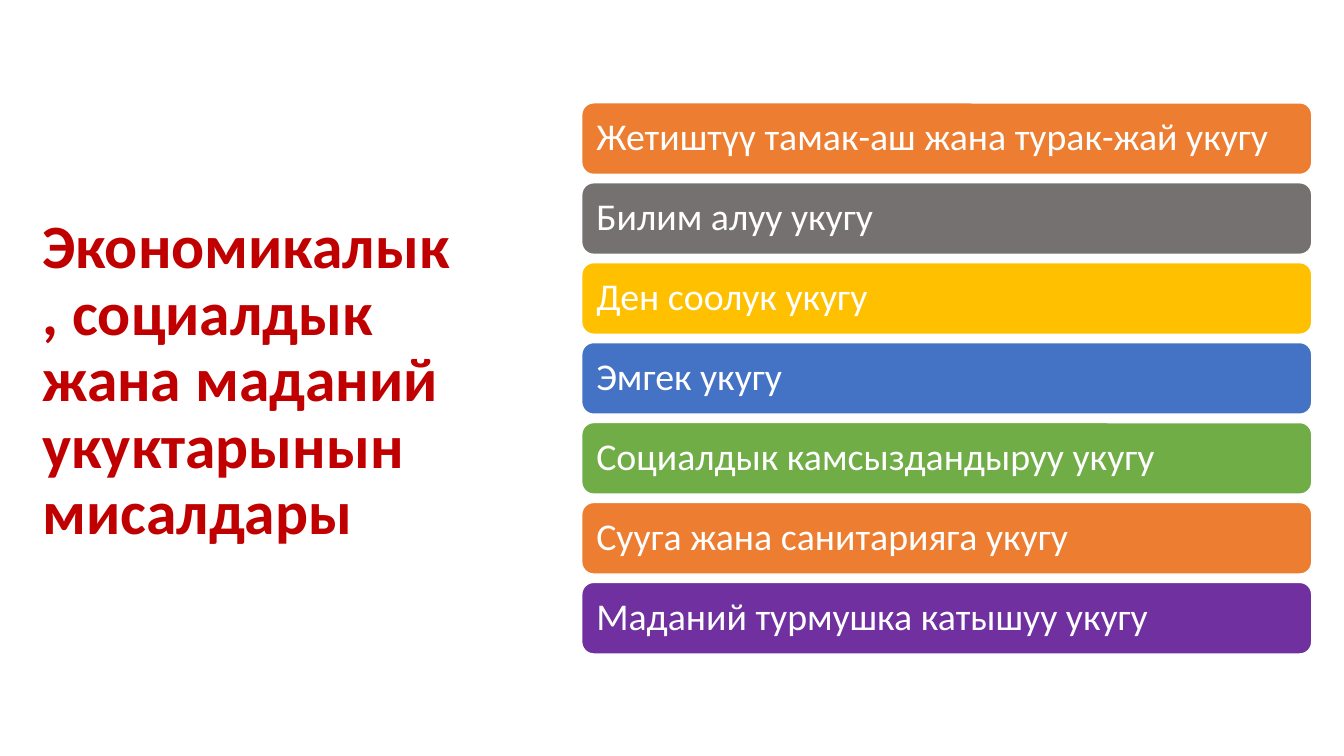
from pptx import Presentation
from pptx.dml.color import RGBColor
from pptx.enum.shapes import MSO_SHAPE
from pptx.enum.text import MSO_ANCHOR, MSO_AUTO_SIZE, PP_ALIGN
from pptx.util import Inches, Pt

ROUNDED = MSO_SHAPE.ROUNDED_RECTANGLE
MIDDLE = MSO_ANCHOR.MIDDLE
NO_AUTOFIT = MSO_AUTO_SIZE.NONE
LEFT = PP_ALIGN.LEFT

WHITE = RGBColor(0xFF, 0xFF, 0xFF)
DARK_RED = RGBColor(0xC0, 0x00, 0x00)
ORANGE = RGBColor(0xED, 0x7D, 0x31)
GRAY = RGBColor(0x76, 0x71, 0x71)
GOLD = RGBColor(0xFF, 0xC0, 0x00)
BLUE = RGBColor(0x44, 0x72, 0xC4)
GREEN = RGBColor(0x70, 0xAD, 0x47)
PURPLE = RGBColor(0x70, 0x30, 0xA0)

BAR_TOP = 1.02
BAR_PITCH = 0.793


def write_text(shape, text, size, color, bold=False, inset_x=0.1, inset_y=0.05):
    frame = shape.text_frame
    frame.word_wrap = True
    frame.auto_size = NO_AUTOFIT
    frame.vertical_anchor = MIDDLE
    frame.margin_left = frame.margin_right = Inches(inset_x)
    frame.margin_top = frame.margin_bottom = Inches(inset_y)
    paragraph = frame.paragraphs[0]
    paragraph.alignment = LEFT
    paragraph.line_spacing = 0.9
    run = paragraph.add_run()
    run.text = text
    run.font.name = "Calibri"
    run.font.size = Pt(size)
    run.font.bold = bold
    run.font.color.rgb = color


prs = Presentation()
prs.slide_width = Inches(13.33)
prs.slide_height = Inches(7.5)
slide = prs.slides.add_slide(prs.slide_layouts[5])

title = slide.shapes.title
title.left, title.top = Inches(0.32), Inches(0.78)
title.width, title.height = Inches(4.4), Inches(6.02)
write_text(
    title,
    "Экономикалык, социалдык жана маданий укуктарынын мисалдары",
    size=44,
    color=DARK_RED,
    bold=True,
)

rights = [
    ("Жетиштүү тамак-аш жана турак-жай укугу", ORANGE),
    ("Билим алуу укугу", GRAY),
    ("Ден соолук укугу", GOLD),
    ("Эмгек укугу", BLUE),
    ("Социалдык камсыздандыруу укугу", GREEN),
    ("Сууга жана санитарияга укугу", ORANGE),
    ("Маданий турмушка катышуу укугу", PURPLE),
]

for index, (right, color) in enumerate(rights):
    top = BAR_TOP + index * BAR_PITCH
    bar = slide.shapes.add_shape(
        ROUNDED, Inches(5.77), Inches(top), Inches(7.24), Inches(0.71)
    )
    bar.shadow.inherit = False
    bar.fill.solid()
    bar.fill.fore_color.rgb = color
    bar.line.color.rgb = WHITE
    bar.line.width = Pt(1)
    write_text(bar, right, size=27, color=WHITE, inset_x=0.11, inset_y=0.11)

prs.save("out.pptx")
